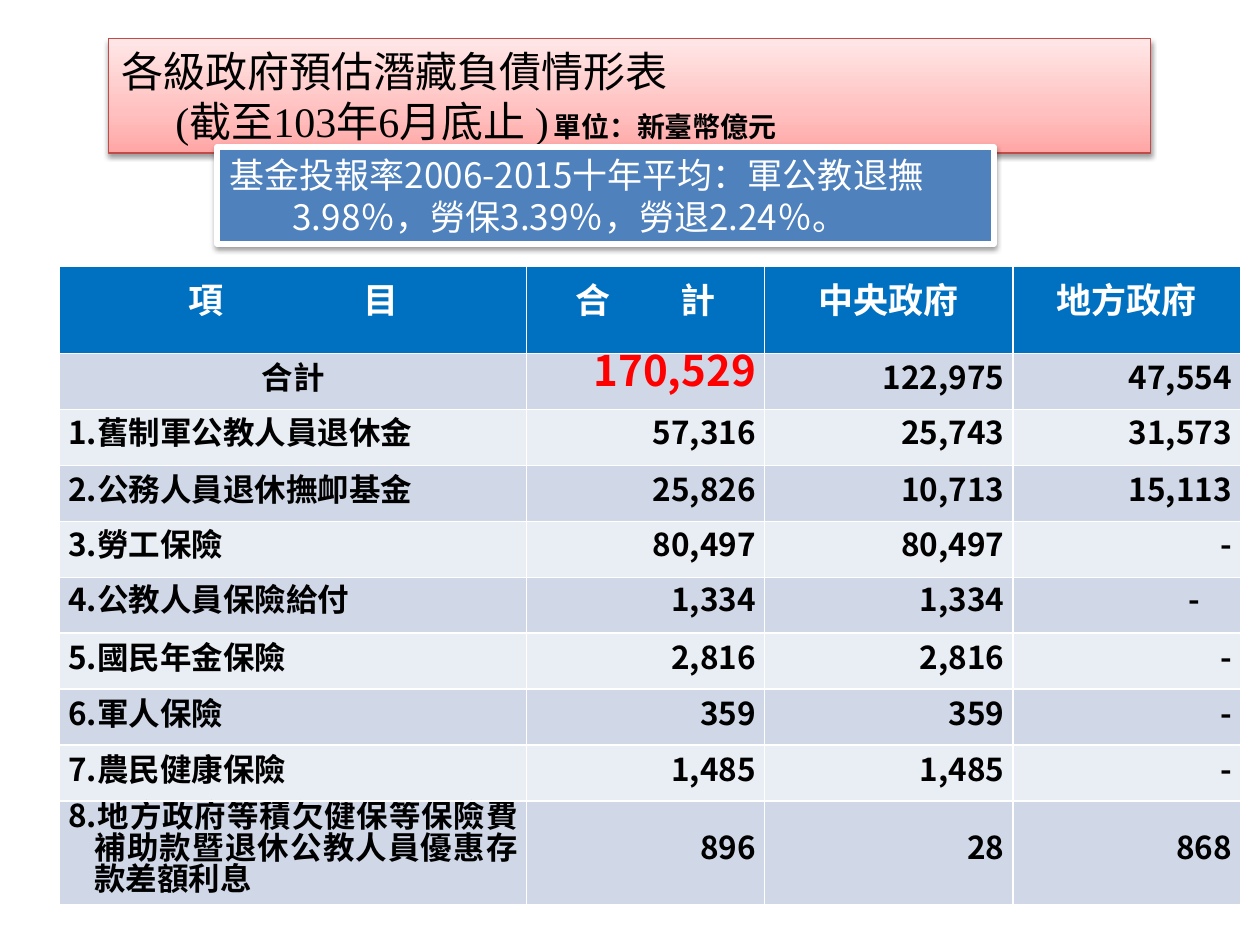
import copy
from dataclasses import dataclass

import pptx
import pptx.dml.color
import pptx.enum.shapes
import pptx.enum.text
import pptx.oxml
import pptx.oxml.ns
import pptx.util

Pt = pptx.util.Pt
Align = pptx.enum.text.PP_ALIGN
Anchor = pptx.enum.text.MSO_ANCHOR

SANS = "Noto Sans CJK SC"
SERIF = "Times New Roman"
WHITE, BLACK, RED = "FFFFFF", "000000", "FF0000"
HEADER_BLUE, DARK_BAND, LIGHT_BAND = "0070C0", "D0D8E8", "E9EDF4"
COLUMN_WIDTHS = [267, 136, 142, 130]
HEADER_HEIGHT, ROW_HEIGHT, LAST_ROW_HEIGHT = 50, 32, 59


@dataclass
class TextStyle:
    size: float
    color: str = BLACK
    bold: bool = False
    font: str = SANS


@dataclass
class Heading:
    """A column heading; gap spreads its two characters apart."""
    text: str
    gap: float = 0


@dataclass
class LiabilityRow:
    item: str
    total: str
    central: str
    local: str
    line_height: float = 20


HEADINGS = [Heading("項目", 80), Heading("合計", 40), Heading("中央政府"), Heading("地方政府")]
ROWS = [
    LiabilityRow("合計", "170,529", "122,975", "47,554"),
    LiabilityRow("1.舊制軍公教人員退休金", "57,316", "25,743", "31,573", 18),
    LiabilityRow("2.公務人員退休撫卹基金", "25,826", "10,713", "15,113"),
    LiabilityRow("3.勞工保險", "80,497", "80,497", "-", 18),
    LiabilityRow("4.公教人員保險給付", "1,334", "1,334", "-　", 18),
    LiabilityRow("5.國民年金保險", "2,816", "2,816", "-"),
    LiabilityRow("6.軍人保險", "359", "359", "-"),
    LiabilityRow("7.農民健康保險", "1,485", "1,485", "-"),
    LiabilityRow("8.地方政府等積欠健保等保險費補助款暨退休公教人員優惠存款差額利息",
                 "896", "28", "868", 18),
]


def rgb(color: str):
    return pptx.dml.color.RGBColor.from_string(color)


def parse_drawing(xml: str):
    tag, rest = xml.split(" ", 1)
    return pptx.oxml.parse_xml(f'{tag} {pptx.oxml.ns.nsdecls("a")} {rest}')


def add_run(paragraph, text: str, style: TextStyle):
    run = paragraph.add_run()
    run.text = text
    font = run.font
    font.size, font.bold, font.name = Pt(style.size), style.bold, style.font
    font.color.rgb = rgb(style.color)
    font._element.append(parse_drawing(f'<a:ea typeface="{SANS}"/>'))
    return run


def set_indent(paragraph, left: float, first_line: float) -> None:
    properties = paragraph._p.get_or_add_pPr()
    properties.set("marL", str(Pt(left)))
    properties.set("indent", str(Pt(first_line)))


def add_shadow(shape) -> None:
    shape.shadow.inherit = False
    effects = shape._element.spPr.find(pptx.oxml.ns.qn("a:effectLst"))
    effects.append(parse_drawing(
        f'<a:outerShdw blurRad="{Pt(3.1)}" dist="{Pt(1.6)}" dir="5400000" rotWithShape="0">'
        f'<a:srgbClr val="{BLACK}"><a:alpha val="38000"/></a:srgbClr></a:outerShdw>'))


def style_cell(cell, fill: str) -> None:
    """Fill the cell and give it thin white borders."""
    properties = cell._tc.get_or_add_tcPr()
    for index, side in enumerate("LRTB"):
        properties.insert(index, parse_drawing(
            f'<a:ln{side} w="{Pt(1)}"><a:solidFill><a:srgbClr val="{WHITE}"/>'
            f'</a:solidFill></a:ln{side}>'))
    cell.fill.solid()
    cell.fill.fore_color.rgb = rgb(fill)


def fill_heading(cell, heading: Heading) -> None:
    style_cell(cell, HEADER_BLUE)
    paragraph = cell.text_frame.paragraphs[0]
    paragraph.alignment = Align.CENTER
    style = TextStyle(20, WHITE, True)
    if heading.gap:
        first = add_run(paragraph, heading.text[0], style)
        first.font._element.set("spc", str(int(heading.gap * 100)))
        add_run(paragraph, heading.text[1:], style)
    else:
        add_run(paragraph, heading.text, style)


def fill_body_cell(cell, text: str, fill: str, line_height: float, style: TextStyle):
    style_cell(cell, fill)
    cell.vertical_anchor = Anchor.MIDDLE
    cell.margin_left = cell.margin_right = Pt(5)
    cell.margin_top = cell.margin_bottom = 0
    paragraph = cell.text_frame.paragraphs[0]
    paragraph.line_spacing = Pt(line_height)
    paragraph.alignment = Align.RIGHT
    add_run(paragraph, text, style)
    return paragraph


def add_liability_table(slide):
    heights = [HEADER_HEIGHT] + [ROW_HEIGHT] * (len(ROWS) - 1) + [LAST_ROW_HEIGHT]
    frame = slide.shapes.add_table(len(heights), len(COLUMN_WIDTHS), Pt(34), Pt(152),
                                   Pt(sum(COLUMN_WIDTHS)), Pt(sum(heights)))
    table = frame.table
    for column, width in zip(table.columns, COLUMN_WIDTHS):
        column.width = Pt(width)
    for table_row, height in zip(table.rows, heights):
        table_row.height = Pt(height)
    for index, heading in enumerate(HEADINGS):
        fill_heading(table.cell(0, index), heading)

    body = TextStyle(18, bold=True)
    for number, row in enumerate(ROWS, start=1):
        is_sum = number == 1
        fill = DARK_BAND if number % 2 else LIGHT_BAND
        item_style = TextStyle(18, bold=True, font=SERIF) if is_sum else body
        item = fill_body_cell(table.cell(number, 0), row.item, fill, row.line_height, item_style)
        if is_sum:
            item.alignment = Align.CENTER
        else:
            item.alignment = Align.JUSTIFY
            set_indent(item, 15, -15)
        for index, amount in enumerate((row.total, row.central, row.local), start=1):
            style = TextStyle(24, RED, True) if is_sum and index == 1 else body
            fill_body_cell(table.cell(number, index), amount, fill, row.line_height, style)
    return frame


def format_title(title) -> None:
    title.left, title.top, title.width, title.height = Pt(62), Pt(22), Pt(595.5), Pt(65.5)
    title.fill.gradient()
    title.fill.gradient_angle = 90
    first_stop = title.fill._fill._gradFill.gsLst[0]
    first_stop.addnext(copy.deepcopy(first_stop))
    stops = [(0, "FFA6A5"), (0.35, "FFC0BF"), (1, "FFE7E7")]
    for stop, (position, color) in zip(title.fill.gradient_stops, stops):
        stop.position = position
        stop.color.rgb = rgb(color)
    title.line.color.rgb = rgb("BF4C48")
    title.line.width = Pt(0.75)
    add_shadow(title)

    text_frame = title.text_frame
    text_frame.word_wrap = True
    text_frame.auto_size = pptx.enum.text.MSO_AUTO_SIZE.NONE
    text_frame.vertical_anchor = Anchor.MIDDLE
    style = TextStyle(24, font=SERIF)
    heading, date = text_frame.paragraphs[0], text_frame.add_paragraph()
    heading.alignment = date.alignment = Align.LEFT
    add_run(heading, "各級政府預估潛藏負債情形表", style)
    set_indent(date, 31, 0)
    date._p.get_or_add_pPr().append(parse_drawing(
        f'<a:tabLst ><a:tab pos="{Pt(422)}" algn="l"/></a:tabLst>'))
    add_run(date, "(截至103年6月底止 )\t", style)
    add_run(date, "單位：新臺幣億元", TextStyle(16, bold=True, font=SERIF))


def add_return_note(slide) -> None:
    note = slide.shapes.add_shape(pptx.enum.shapes.MSO_SHAPE.RECTANGLE,
                                  Pt(124), Pt(84), Pt(444), Pt(55.5))
    note.fill.solid()
    note.fill.fore_color.rgb = rgb("4F81BD")
    note.line.color.rgb = rgb(WHITE)
    note.line.width = Pt(3)
    add_shadow(note)
    note.text_frame.word_wrap = True
    paragraph = note.text_frame.paragraphs[0]
    paragraph.alignment = Align.LEFT
    set_indent(paragraph, 36, -36)
    add_run(paragraph, "基金投報率2006-2015十年平均：軍公教退撫3.98％，勞保3.39％，勞退2.24％。",
            TextStyle(20, WHITE))


def main() -> None:
    presentation = pptx.Presentation()
    presentation.slide_width, presentation.slide_height = Pt(720), Pt(540)
    slide = presentation.slides.add_slide(presentation.slide_layouts[5])
    title = slide.shapes.title
    format_title(title)
    table_frame = add_liability_table(slide)
    title._element.addprevious(table_frame._element)
    add_return_note(slide)
    presentation.save("out.pptx")


if __name__ == "__main__":
    main()
